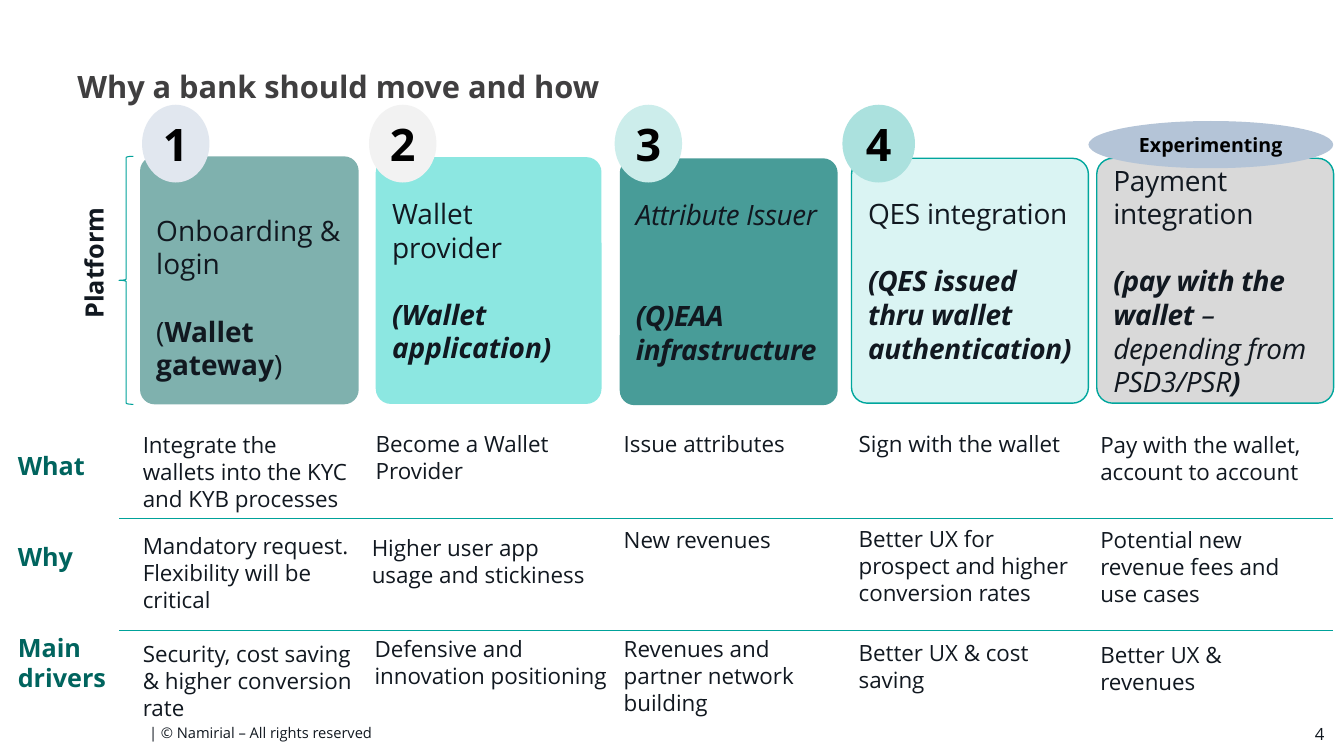
from dataclasses import dataclass, field
from lxml.etree import SubElement
from pptx import Presentation
from pptx.dml.color import RGBColor
from pptx.enum.shapes import MSO_CONNECTOR, MSO_SHAPE
from pptx.enum.text import MSO_ANCHOR, PP_ALIGN
from pptx.oxml.ns import qn
from pptx.util import Cm, Pt

FACE = "Open Sans"
INK, PINE, TEAL = "111820", "00645E", "00A29A"
LEAD = 1.2  # line height as a multiple of the text size
BOLD = {"bold": True}
SLANT = {"italic": True}
BOTH = {"bold": True, "italic": True}
Box = tuple[float, float, float, float]


@dataclass
class Para:
    runs: list[tuple[str, dict]]
    gap: int = 0  # empty lines before


@dataclass
class Style:
    size: float = 16
    hue: str = INK
    align: PP_ALIGN = PP_ALIGN.LEFT
    anchor: MSO_ANCHOR = MSO_ANCHOR.TOP
    inset: Box = (0.25, 0.13, 0.25, 0.13)
    track: int = 0


@dataclass
class Card:
    box: Box
    fill: str
    paras: list[Para]
    badge: str
    spot: Box
    tint: str
    alpha: int = 100
    line: str = ""
    top: float = 0
    track: int = 0
    size: float = 32


@dataclass
class Note:
    left: float
    top: float
    width: float
    text: str
    style: Style = field(default_factory=Style)


def color(code: str) -> RGBColor:
    return RGBColor.from_string(code)


def plain(text: str, **look) -> list[Para]:
    return [Para([(text, look)])]


def write(shape, paras: list[Para], style: Style) -> None:
    frame = shape.text_frame
    left, top, right, low = (Cm(n) for n in style.inset)
    form = {"word_wrap": True, "vertical_anchor": style.anchor, "margin_left": left,
            "margin_top": top, "margin_right": right, "margin_bottom": low}
    for key, val in form.items():
        setattr(frame, key, val)
    for i, item in enumerate(paras):
        para = frame.add_paragraph() if i else frame.paragraphs[0]
        step = style.size * LEAD
        form = {"alignment": style.align, "line_spacing": Pt(step),
                "space_before": Pt(step * item.gap)}
        for key, val in form.items():
            setattr(para, key, val)
        for text, look in item.runs:
            run = para.add_run()
            run.text = text
            for key, val in {"name": FACE, "size": Pt(style.size), **look}.items():
                setattr(run.font, key, val)
            run.font.color.rgb = color(style.hue)
            if style.track:
                run.font._element.set("spc", str(style.track))


def label(slide, box: Box, paras: list[Para], style: Style, turn: float = 0) -> None:
    shape = slide.shapes.add_textbox(*(Cm(n) for n in box))
    shape.rotation = turn
    write(shape, paras, style)


def draw(slide, kind: MSO_SHAPE, box: Box, fill: str = "", alpha: int = 100,
         line: str = "", width: float = 1):
    shape = slide.shapes.add_shape(kind, *(Cm(n) for n in box))
    shape.shadow.inherit = False
    if fill:
        shape.fill.solid()
        shape.fill.fore_color.rgb = color(fill)
        if alpha < 100:
            tone = shape.fill._xPr.find(qn("a:solidFill"))[0]
            SubElement(tone, qn("a:alpha"), val=str(alpha * 1000))
    else:
        shape.fill.background()
    if line:
        shape.line.color.rgb = color(line)
        shape.line.width = Pt(width)
    else:
        shape.line.fill.background()
    return shape


def place(slide, card: Card) -> None:
    body = draw(slide, MSO_SHAPE.ROUNDED_RECTANGLE, card.box, card.fill, card.alpha, card.line)
    body.adjustments[0] = 0.067
    write(body, card.paras, Style(20, anchor=MSO_ANCHOR.MIDDLE, track=card.track,
                                  inset=(0.3, card.top, 0.3, 0)))
    badge = draw(slide, MSO_SHAPE.OVAL, card.spot, card.tint)
    write(badge, plain(card.badge, **BOLD),
          Style(card.size, "000000", PP_ALIGN.CENTER, MSO_ANCHOR.MIDDLE, (0, 0, 0, 0)))


def rule(slide, left: float, right: float, top: float) -> None:
    line = slide.shapes.add_connector(MSO_CONNECTOR.STRAIGHT, Cm(left), Cm(top),
                                      Cm(right), Cm(top))
    line.line.color.rgb = color(TEAL)
    line.line.width = Pt(0.75)
    SubElement(line._element.spPr, qn("a:effectLst"))


CARDS = [
    Card((3.53, 3.94, 5.51, 6.25), PINE,
         [Para([("Onboarding & login", {})]),
          Para([("(", {}), ("Wallet gateway", BOLD), (")", {})], 1)],
         "1", (3.58, 2.64, 1.7, 1.96), "E1E7EF", alpha=50, top=0.85),
    Card((9.47, 3.96, 5.69, 6.22), "00CBBE",
         [Para([("Wallet provider", {})]), Para([("(Wallet application)", BOTH)], 1)],
         "2", (9.3, 2.64, 1.7, 1.96), "F2F2F2", alpha=45),
    Card((15.62, 3.99, 5.49, 6.22), "268A85",
         [Para([("Attribute Issuer", SLANT)]), Para([("(Q)EAA infrastructure", BOTH)], 2)],
         "3", (15.49, 2.64, 1.7, 1.96), "CCEDEB", alpha=84, track=-30),
    Card((21.46, 3.99, 5.97, 6.17), "D4F3F1",
         [Para([("QES integration", {})]),
          Para([("(QES issued thru wallet authentication)", BOTH)], 1)],
         "4", (21.23, 2.64, 1.83, 1.96), "ABE1DE", alpha=85, line="00A69D", track=-20),
    Card((27.64, 3.99, 5.97, 6.17), "D9D9D9",
         [Para([("Payment integration", {})]),
          Para([("(pay with the wallet ", BOTH), ("– depending from PSD3/PSR", SLANT),
                (")", BOTH)], 1)],
         "Experimenting", (27.43, 3.05, 6.17, 1.19), "B4C4D7", line="00A69D", track=-20,
         size=14),
]

NOTES = [
    # What
    Note(3.35, 10.74, 5.69, "Integrate the wallets into the KYC and KYB processes"),
    Note(9.22, 10.72, 5.69, "Become a Wallet Provider"),
    Note(15.47, 10.72, 5.69, "Issue attributes"),
    Note(21.39, 10.72, 5.69, "Sign with the wallet"),
    Note(27.48, 10.74, 5.69, "Pay with the wallet, account to account"),
    # Why
    Note(3.35, 13.28, 6.2, "Mandatory request. Flexibility will be critical"),
    Note(9.12, 13.34, 6.12, "Higher user app usage and stickiness"),
    Note(15.47, 13.13, 6.12, "New revenues"),
    Note(21.39, 13.11, 5.89, "Better UX for prospect and higher conversion rates"),
    Note(27.48, 13.13, 5.89, "Potential new revenue fees and use cases"),
    # Main drivers
    Note(3.35, 16, 6.2, "Security, cost saving & higher conversion rate"),
    Note(9.19, 15.88, 6.63, "Defensive and innovation positioning"),
    Note(15.47, 15.88, 5.89, "Revenues and partner network building"),
    Note(21.39, 15.98, 5.89, "Better UX & cost saving"),
    Note(27.48, 16.03, 5.89, "Better UX & revenues"),
]


def main() -> None:
    deck = Presentation()
    deck.slide_width, deck.slide_height = Cm(33.87), Cm(19.05)
    slide = deck.slides.add_slide(deck.slide_layouts[6])
    mid, flush = MSO_ANCHOR.MIDDLE, (0, 0, 0, 0)

    # Title and footer
    label(slide, (1.7, 1.57, 31.04, 1.22), plain("Why a bank should move and how", **BOLD),
          Style(22, "403F40", anchor=mid))
    label(slide, (3.76, 18.21, 16.94, 0.51), plain("| © Namirial – All rights reserved"),
          Style(10.5, anchor=mid, inset=flush))
    label(slide, (31.42, 18.16, 1.96, 0.66), plain("4"),
          Style(12, align=PP_ALIGN.RIGHT, anchor=mid, inset=flush))

    # Platform cards
    for card in CARDS:
        place(slide, card)
    label(slide, (0.53, 5.94, 3.66, 1.02), plain("Platform", **BOLD), Style(18), 270)
    draw(slide, MSO_SHAPE.LEFT_BRACE, (3, 3.94, 0.36, 6.25), line=TEAL, width=0.75)

    # Row heads, notes and rules
    heads = [("What", 0), ("Why", 2), ("Main", 2), ("drivers", 0)]
    label(slide, (0.2, 11.23, 3, 6.4), [Para([(text, BOLD)], gap) for text, gap in heads],
          Style(18, PINE))
    for note in NOTES:
        label(slide, (note.left, note.top, note.width, 1.63), plain(note.text), note.style)
    for top in (13.06, 15.88):
        rule(slide, 3, 33.6, top)

    deck.save("out.pptx")


if __name__ == "__main__":
    main()
